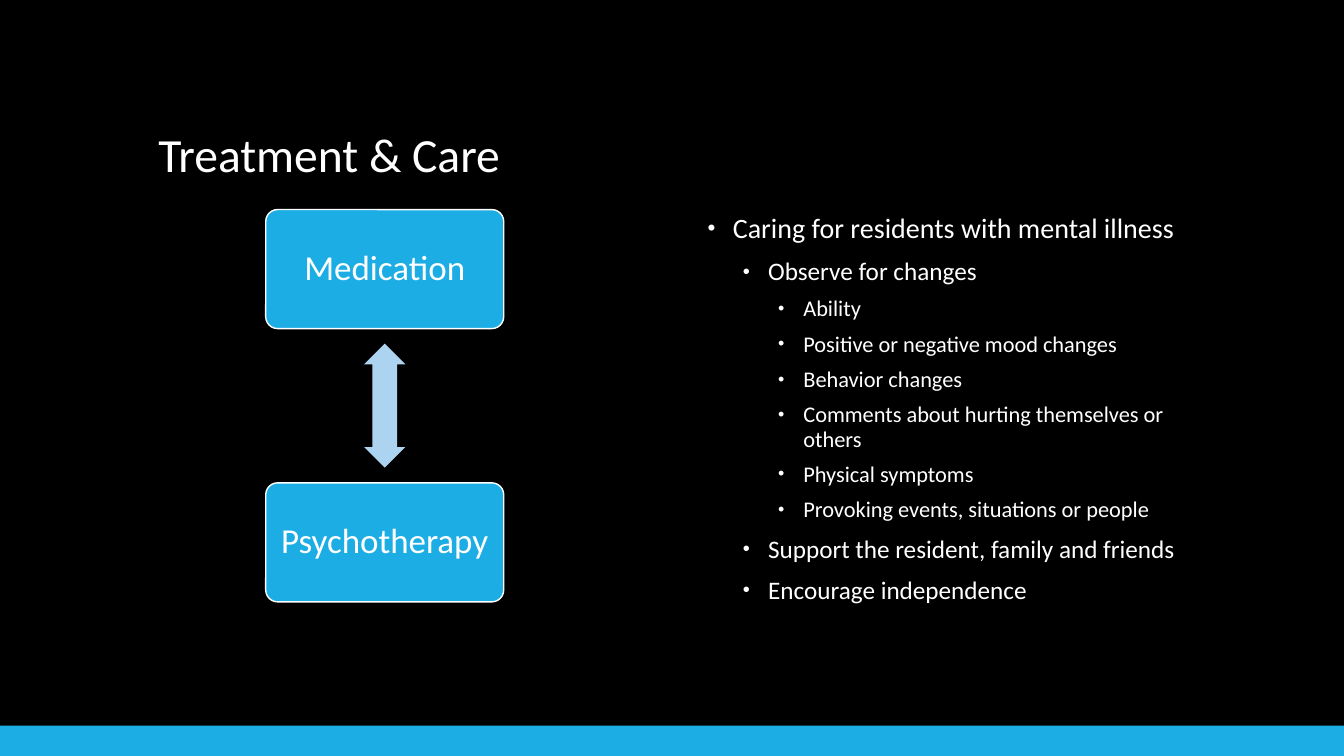
"""Build the Treatment & Care slide."""
from lxml.etree import SubElement
from pptx import Presentation
from pptx.dml.color import RGBColor
from pptx.enum.shapes import MSO_SHAPE
from pptx.enum.text import MSO_ANCHOR, MSO_AUTO_SIZE, PP_ALIGN
from pptx.oxml.ns import qn
from pptx.util import Pt

BLACK = RGBColor(0x00, 0x00, 0x00)
WHITE = RGBColor(0xFF, 0xFF, 0xFF)
BLUE = RGBColor(0x1C, 0xAD, 0xE4)
PALE_BLUE = RGBColor(0xAC, 0xD3, 0xEF)


def add_block(kind, left, top, width, height, color):
    block = page.shapes.add_shape(kind, Pt(left), Pt(top), Pt(width), Pt(height))
    block.shadow.inherit = False
    block.fill.solid()
    block.fill.fore_color.rgb = color
    block.line.fill.background()
    return block


def write(para, text, size, align):
    para.text = text
    para.alignment = align
    para.line_spacing = 0.9
    for span in para.runs:
        span.font.name = "Calibri"
        span.font.size = Pt(size)
        span.font.color.rgb = WHITE


deck = Presentation()
deck.slide_width, deck.slide_height = Pt(960), Pt(540)
page = deck.slides.add_slide(deck.slide_layouts[1])
page.background.fill.solid()
page.background.fill.fore_color.rgb = BLACK

add_block(MSO_SHAPE.RECTANGLE, 0, 518.4, 960, 21.6, BLUE)

title = page.shapes.title
title.left, title.top, title.width, title.height = Pt(105.84), Pt(36.7), Pt(748.8), Pt(97.2)
title.text_frame.auto_size = MSO_AUTO_SIZE.NONE
title.text_frame.vertical_anchor = MSO_ANCHOR.BOTTOM
write(title.text_frame.paragraphs[0], "Treatment & Care", 34, PP_ALIGN.LEFT)

care_points = [
    (0, "Caring for residents with mental illness"),
    (1, "Observe for changes"),
    (2, "Ability"),
    (2, "Positive or negative mood changes"),
    (2, "Behavior changes"),
    (2, "Comments about hurting themselves or others"),
    (2, "Physical symptoms"),
    (2, "Provoking events, situations or people"),
    (1, "Support the resident, family and friends"),
    (1, "Encourage independence"),
]
level_sizes = [20, 18, 16]
level_gaps = [18, 10, 8]

body = page.placeholders[1]
body.left, body.top, body.width, body.height = Pt(494.64), Pt(149.8), Pt(360), Pt(324.7)
body.text_frame.auto_size = MSO_AUTO_SIZE.NONE
body.text_frame.text = "\n".join(text for level, text in care_points)
for para, (level, text) in zip(body.text_frame.paragraphs, care_points):
    para.level = level
    para.space_before = Pt(level_gaps[level])
    write(para, text, level_sizes[level], PP_ALIGN.LEFT)
    properties = para._p.get_or_add_pPr()
    properties.set("marL", str(Pt(21.6 + 25.2 * level)))
    properties.set("indent", str(Pt(-18)))
    SubElement(properties, qn("a:buSzPct")).set("val", "80000")
    SubElement(properties, qn("a:buFont")).set("typeface", "Arial")
    SubElement(properties, qn("a:buChar")).set("char", "•")

center_x, center_y = 274.8, 289.8
node_width, node_height, node_pitch = 170, 85, 195.2
arrow_length, arrow_width = 88.6, 29.5

for side, name in [(-1, "Medication"), (1, "Psychotherapy")]:
    node_top = center_y + side * node_pitch / 2 - node_height / 2
    node = add_block(MSO_SHAPE.ROUNDED_RECTANGLE, center_x - node_width / 2, node_top,
                     node_width, node_height, BLUE)
    node.adjustments[0] = 0.1
    node.line.color.rgb = WHITE
    node.line.width = Pt(1)
    frame = node.text_frame
    frame.word_wrap = True
    frame.vertical_anchor = MSO_ANCHOR.MIDDLE
    frame.margin_left = frame.margin_right = Pt(7.2)
    write(frame.paragraphs[0], name, 25, PP_ALIGN.CENTER)

arrow = add_block(MSO_SHAPE.LEFT_RIGHT_ARROW, center_x - arrow_length / 2,
                  center_y - arrow_width / 2, arrow_length, arrow_width, PALE_BLUE)
arrow.adjustments[0] = 0.6
arrow.adjustments[1] = 0.5
arrow.rotation = 90

deck.save("out.pptx")
